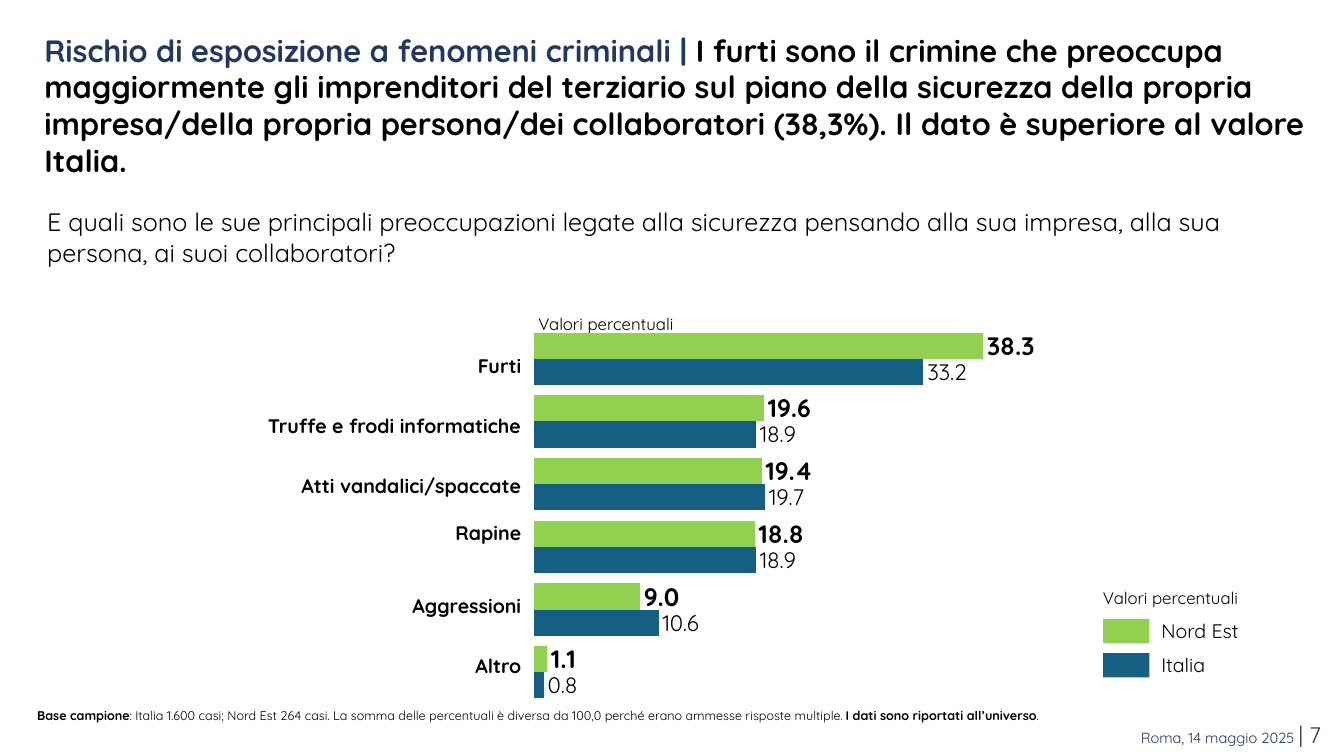
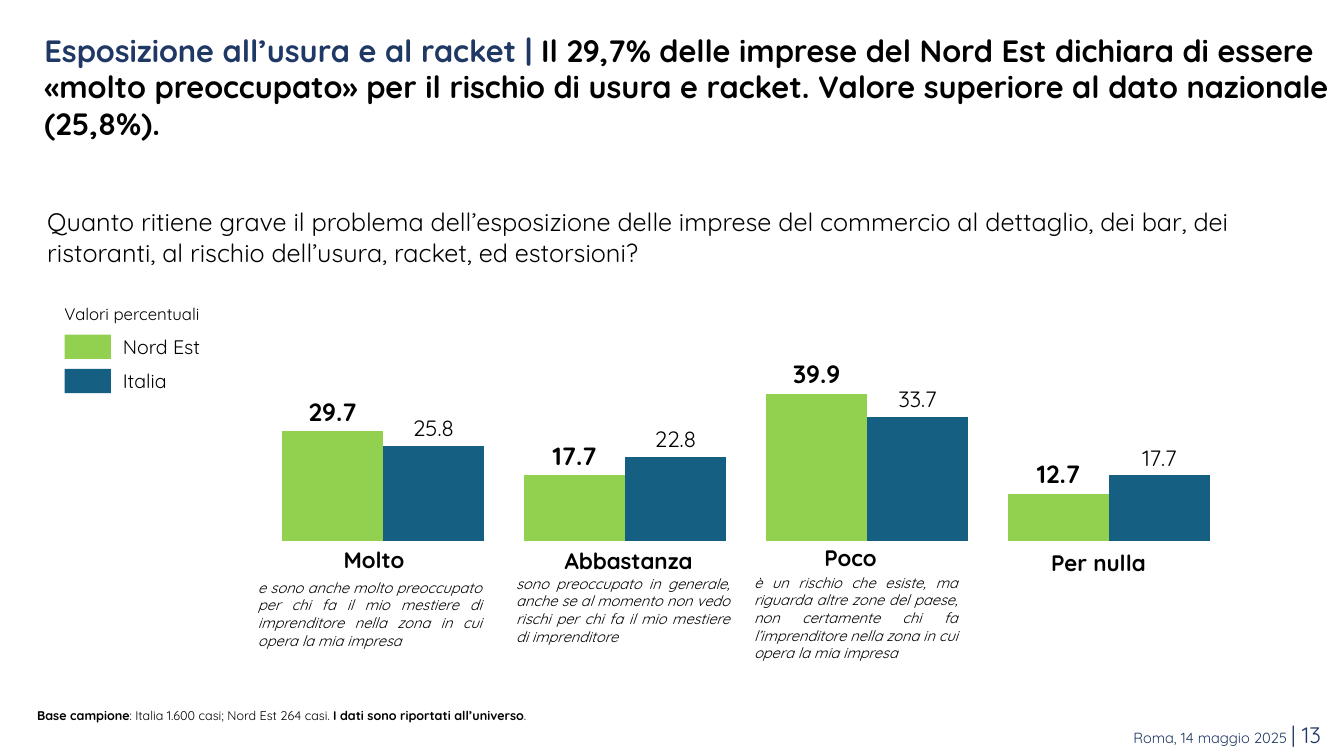
import pptx
import pptx.chart.data
import pptx.dml.color
import pptx.enum.chart
import pptx.enum.shapes
import pptx.enum.text
import pptx.oxml
import pptx.oxml.ns
import pptx.util

Inches = pptx.util.Inches
RGBColor = pptx.dml.color.RGBColor
ALIGN = pptx.enum.text.PP_ALIGN
CHART = pptx.enum.chart.XL_CHART_TYPE

# Shared colours and text formats
NAVY = RGBColor(0x20, 0x38, 0x64)
BLACK = RGBColor(0, 0, 0)
GREEN = RGBColor(0x92, 0xD0, 0x50)
BLUE = RGBColor(0x15, 0x60, 0x82)

BASE = {"name": "Quicksand", "size": 14, "bold": False, "italic": False, "color": BLACK}
TITLE = {"size": 22, "bold": True}
TOPIC = {**TITLE, "color": NAVY}
QUESTION = {"size": 18}
CAPTION = {"size": 12}
KEY = {"size": 14}
ROW = {"size": 14, "bold": True}
ANSWER = {"size": 16, "bold": True}
DETAIL = {"size": 10.5, "italic": True}
NOTE = {"size": 9}
NOTE_BOLD = {"size": 9, "bold": True}
DATE = {"size": 10.5, "color": NAVY}
PAGE = {"size": 16, "color": NAVY}

# Series: name, colour, label format, label number format
NORD_EST = ("Nord Est", GREEN, {"size": 18, "bold": True}, "###0.0")
ITALIA = ("Italia", BLUE, {"size": 16}, "0.0")


def style(font, fmt):
    for key, value in {**BASE, **fmt}.items():
        if key == "color":
            font.color.rgb = value
        else:
            setattr(font, key, pptx.util.Pt(value) if key == "size" else value)


def add_runs(p, runs, align):
    p.alignment = align
    for text, fmt in runs:
        r = p.add_run()
        r.text = text
        style(r.font, fmt)


def add_text(shapes, box, runs, align=ALIGN.LEFT, margins=(0.1, 0.05), spacing=None):
    sp = shapes.add_textbox(*map(Inches, box))
    tf = sp.text_frame
    tf.word_wrap = True
    tf.auto_size = pptx.enum.text.MSO_AUTO_SIZE.SHAPE_TO_FIT_TEXT
    tf.margin_left = tf.margin_right = Inches(margins[0])
    tf.margin_top = tf.margin_bottom = Inches(margins[1])
    p = tf.paragraphs[0]
    add_runs(p, runs, align)
    if spacing:
        p.line_spacing = spacing


def add_legend(s, x, y):
    shapes = s.shapes.add_group_shape().shapes
    add_text(shapes, (x - 0.28, y, 1.72, 0.3), [("Valori percentuali", CAPTION)], ALIGN.RIGHT)
    for i, (name, color, *_) in enumerate((NORD_EST, ITALIA)):
        top = y + 0.36 + 0.34 * i
        sp = shapes.add_shape(pptx.enum.shapes.MSO_SHAPE.RECTANGLE,
                              *map(Inches, (x, top, 0.46, 0.24)))
        sp.shadow.inherit = False
        sp.fill.solid()
        sp.fill.fore_color.rgb = color
        sp.line.fill.background()
        add_text(shapes, (x + 0.48, top - 0.05, 1.34, 0.34), [(name, KEY)])


def set_plot_layout(chart, layout):
    """Place the inner plot area by fractions (x, y, w, h) of the chart."""
    area = chart._chartSpace.xpath(".//c:plotArea")[0]
    for old in area.xpath("./c:layout"):
        area.remove(old)
    sizes = "".join(f'<c:{k} val="{v}"/>' for k, v in zip("xywh", layout))
    area.insert(0, pptx.oxml.parse_xml(
        f'<c:layout {pptx.oxml.ns.nsdecls("c")}><c:manualLayout>'
        '<c:layoutTarget val="inner"/><c:xMode val="edge"/><c:yMode val="edge"/>'
        f'{sizes}</c:manualLayout></c:layout>'))


def add_bars(s, kind, box, layout, categories, series):
    data = pptx.chart.data.CategoryChartData()
    data.categories = categories
    for (name, *_), values in series:
        data.add_series(name, values)
    chart = s.shapes.add_chart(kind, *map(Inches, box), data).chart
    chart.has_legend = chart.has_title = False
    style(chart.font, {"name": "Arial", "size": 10})
    for axis in (chart.category_axis, chart.value_axis):
        axis.has_major_gridlines = False
        axis.visible = False
    chart.value_axis.minimum_scale = 0
    chart.value_axis.maximum_scale = 40
    plot = chart.plots[0]
    plot.gap_width = 40
    plot.overlap = 0
    plot.vary_by_categories = False
    for ser, ((_, color, fmt, number_format), _) in zip(plot.series, series):
        ser.format.fill.solid()
        ser.format.fill.fore_color.rgb = color
        labels = ser.data_labels
        labels.show_value = True
        labels.position = pptx.enum.chart.XL_LABEL_POSITION.OUTSIDE_END
        labels.number_format = number_format
        labels.number_format_is_linked = False
        style(labels.font, fmt)
    set_plot_layout(chart, layout)


def add_row_labels(s, box, names, raised):
    table = s.shapes.add_table(len(names), 1, *map(Inches, box)).table
    table.first_row = table.horz_banding = False
    for i, name in enumerate(names):
        cell = table.cell(i, 0)
        cell.fill.background()
        cell.vertical_anchor = pptx.enum.text.MSO_ANCHOR.MIDDLE
        for side in ("left", "right", "top", "bottom"):
            setattr(cell, f"margin_{side}", 0)
        if name == raised:
            cell.margin_bottom = Inches(0.26)
        add_runs(cell.text_frame.paragraphs[0], [(name, ROW)], ALIGN.RIGHT)


def add_page(prs, number, topic, message, question, sample):
    """Blank slide with the title, question, sample note and footer."""
    s = prs.slides.add_slide(prs.slide_layouts[6])
    add_text(s.shapes, (6.27, 7.11, 6.93, 0.37),
             [("Roma, 14 maggio 2025 ", DATE), (f"| {number}", PAGE)], ALIGN.RIGHT)
    add_text(s.shapes, (0.37, 2, 12.67, 0.71), [(question, QUESTION)])
    add_text(s.shapes, (0.27, 6.96, 12.55, 0.25),
             [("Base campione", NOTE_BOLD), (f": {sample} ", NOTE),
              ("I dati sono riportati all’universo", NOTE_BOLD), (".", NOTE)],
             ALIGN.JUSTIFY, spacing=1.1)
    add_text(s.shapes, (0.37, 0.27, 12.91, 1.56),
             [(f"{topic} | ", TOPIC), (message, TITLE)], margins=(0.07, 0.04))
    return s


def build_crime_slide(prs):
    s = add_page(
        prs, 7, "Rischio di esposizione a fenomeni criminali",
        "I furti sono il crimine che preoccupa maggiormente gli imprenditori del terziario "
        "sul piano della sicurezza della propria impresa/della propria persona/dei "
        "collaboratori (38,3%). Il dato è superiore al valore Italia.",
        "E quali sono le sue principali preoccupazioni legate alla sicurezza pensando alla "
        "sua impresa, alla sua persona, ai suoi collaboratori?",
        "Italia 1.600 casi; Nord Est 264 casi. La somma delle percentuali è diversa da "
        "100,0 perché erano ammesse risposte multiple.")
    crimes = ["Furti", "Truffe e frodi informatiche", "Atti vandalici/spaccate",
              "Rapine", "Aggressioni", "Altro"]
    add_row_labels(s, (1.31, 3.34, 3.86, 3.56), crimes, raised="Rapine")
    add_text(s.shapes, (5.24, 3.06, 2.15, 0.3), [("Valori percentuali", CAPTION)])
    add_legend(s, 10.94, 5.78)
    # Horizontal bars run from the bottom up
    add_bars(s, CHART.BAR_CLUSTERED, (5.19, 3.17, 5.47, 3.89), (0.02, 0.02, 0.85, 0.96),
             crimes[::-1],
             [(ITALIA, (0.8, 10.6, 18.9, 19.7, 18.9, 33.2)),
              (NORD_EST, (1.1, 9, 18.8, 19.4, 19.6, 38.3))])


def build_racket_slide(prs):
    s = add_page(
        prs, 13, "Esposizione all’usura e al racket",
        "Il 29,7% delle imprese del Nord Est dichiara di essere «molto preoccupato» per il "
        "rischio di usura e racket. Valore superiore al dato nazionale (25,8%).",
        "Quanto ritiene grave il problema dell’esposizione delle imprese del commercio al "
        "dettaglio, dei bar, dei ristoranti, al rischio dell’usura, racket, ed estorsioni?",
        "Italia 1.600 casi; Nord Est 264 casi.")
    # Answers: name and its box, then explanation and its box
    answers = [
        ("Molto", (2.89, 5.37, 1.64, 0.37),
         "e sono anche molto preoccupato per chi fa il mio mestiere di imprenditore nella "
         "zona in cui opera la mia impresa", (2.46, 5.69, 2.42, 0.98)),
        ("Abbastanza", (5.37, 5.38, 1.73, 0.37),
         "sono preoccupato in generale, anche se al momento non vedo rischi per chi fa il "
         "mio mestiere di imprenditore", (5.02, 5.65, 2.32, 0.98)),
        ("Poco", (7.54, 5.35, 1.79, 0.37),
         "è un rischio che esiste, ma riguarda altre zone del paese, non certamente chi fa "
         "l’imprenditore nella zona in cui opera la mia impresa", (7.38, 5.64, 2.22, 0.98)),
        ("Per nulla", (10, 5.4, 1.79, 0.37), None, None),
    ]
    for name, name_box, detail, detail_box in answers:
        add_text(s.shapes, name_box, [(name, ANSWER)], ALIGN.CENTER)
        if detail:
            add_text(s.shapes, detail_box, [(detail, DETAIL)], ALIGN.JUSTIFY)
    add_legend(s, 0.64, 2.96)
    add_bars(s, CHART.COLUMN_CLUSTERED, (2.4, 3.56, 10, 1.84), (0.02, 0.18, 0.96, 0.8),
             [answer[0] for answer in answers],
             [(NORD_EST, (29.7, 17.7, 39.9, 12.7)),
              (ITALIA, (25.8, 22.8, 33.7, 17.7))])


def main():
    prs = pptx.Presentation()
    prs.slide_width = Inches(13.33)
    prs.slide_height = Inches(7.5)
    build_crime_slide(prs)
    build_racket_slide(prs)
    prs.save("out.pptx")


if __name__ == "__main__":
    main()
